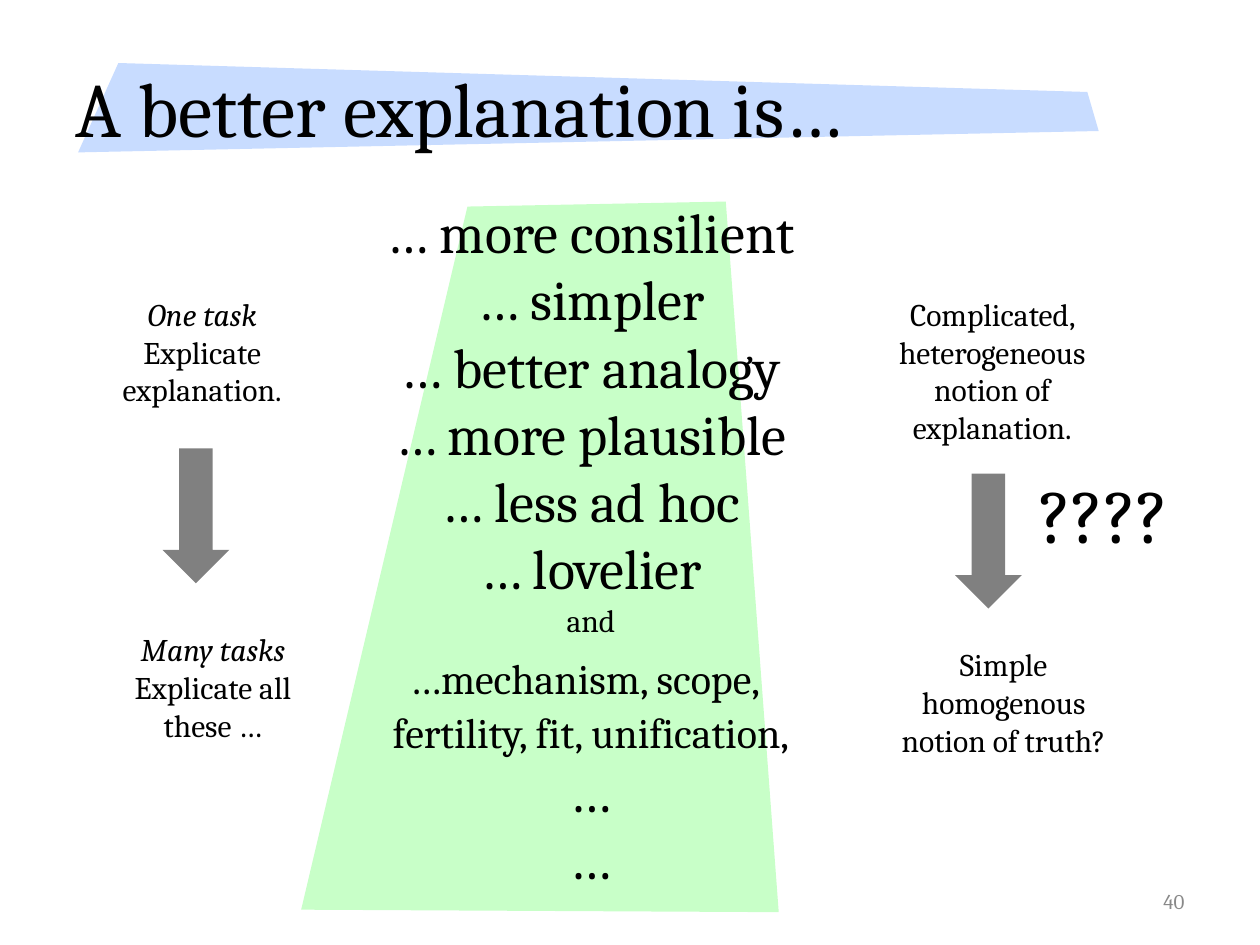
"""Build the slide "A better explanation is…" and save it as out.pptx."""
from pptx import Presentation
from pptx.dml.color import RGBColor
from pptx.enum.shapes import MSO_SHAPE
from pptx.enum.text import MSO_ANCHOR, PP_ALIGN
from pptx.util import Inches, Pt

LEFT, CENTER, RIGHT = PP_ALIGN.LEFT, PP_ALIGN.CENTER, PP_ALIGN.RIGHT
TOP, MIDDLE = MSO_ANCHOR.TOP, MSO_ANCHOR.MIDDLE
DOWN_ARROW = MSO_SHAPE.DOWN_ARROW

FONT = "Cambria"
BLACK, GREY, PAGE_GREY = "000000", "808080", "898989"

BACKDROPS = [
    ("C8FFC8", [(3.71, 1.64), (5.76, 1.6), (6.18, 7.24), (2.39, 7.22)]),
    ("C8DCFF", [(0.94, 0.5), (8.63, 0.73), (8.72, 1.04), (0.62, 1.21)]),
]

TITLE = [[("A better explanation is…", 44)]]
PAGE_NUMBER = [[("40", 12)]]
QUESTION = [[("????", 44)]]
VIRTUES = [
    [("… more consilient", 32)],
    [("… simpler", 32)],
    [("… better analogy", 32)],
    [("… more plausible", 32)],
    [("… less ad hoc", 32)],
    [("… lovelier", 32)],
    [("and", 18)],
    [("…mechanism, scope,", 24), (" ", 32)],
    [("fertility, fit, unification,", 24)],
    [("…", 32)],
    [("…", 32)],
]

NOTES = [
    ((6.8, 2.29, 2.15, 1.31), None, "Complicated, heterogeneous notion of explanation."),
    ((6.89, 5.07, 2.15, 1.01), None, "Simple homogenous notion of truth?"),
    ((0.77, 2.29, 1.67, 1.01), "One task", "Explicate explanation."),
    ((0.81, 4.95, 1.76, 1.01), "Many tasks", "Explicate all these …"),
]
ARROWS = [(7.58, 3.76), (1.29, 3.56)]
ARROW_SIZE = (0.53, 1.07)


def paint(shape, color):
    shape.shadow.inherit = False
    shape.fill.solid()
    shape.fill.fore_color.rgb = RGBColor.from_string(color)
    shape.line.fill.background()


def add_backdrop(slide, color, points):
    corners = [(Inches(x), Inches(y)) for x, y in points]
    builder = slide.shapes.build_freeform(*corners[0])
    builder.add_line_segments(corners[1:], close=True)
    paint(builder.convert_to_shape(), color)


def add_text(slide, box, paragraphs, align=CENTER, anchor=TOP, wrap=True,
             color=BLACK, italic_first=False):
    text_frame = slide.shapes.add_textbox(*map(Inches, box)).text_frame
    text_frame.word_wrap = wrap
    text_frame.vertical_anchor = anchor
    for index, runs in enumerate(paragraphs):
        paragraph = text_frame.add_paragraph() if index else text_frame.paragraphs[0]
        paragraph.alignment = align
        for text, size in runs:
            run = paragraph.add_run()
            run.text = text
            run.font.name = FONT
            run.font.size = Pt(size)
            run.font.italic = italic_first and index == 0
            run.font.color.rgb = RGBColor.from_string(color)


def main():
    presentation = Presentation()
    presentation.slide_width, presentation.slide_height = Inches(10), Inches(7.5)
    slide = presentation.slides.add_slide(presentation.slide_layouts[6])

    for color, points in BACKDROPS:
        add_backdrop(slide, color, points)

    add_text(slide, (0.5, 0.3, 7.32, 1.1), TITLE, LEFT, MIDDLE)
    add_text(slide, (7.17, 6.95, 2.33, 0.4), PAGE_NUMBER, RIGHT, MIDDLE, color=PAGE_GREY)
    add_text(slide, (2.92, 1.52, 3.54, 5.76), VIRTUES, wrap=False)
    add_text(slide, (8.15, 3.65, 1.3, 0.84), QUESTION, LEFT, wrap=False)

    for box, heading, body in NOTES:
        paragraphs = [[(text, 18)] for text in (heading, body) if text]
        add_text(slide, box, paragraphs, italic_first=heading is not None)

    for position in ARROWS:
        arrow = slide.shapes.add_shape(DOWN_ARROW, *map(Inches, position + ARROW_SIZE))
        paint(arrow, GREY)

    presentation.save("out.pptx")


if __name__ == "__main__":
    main()
